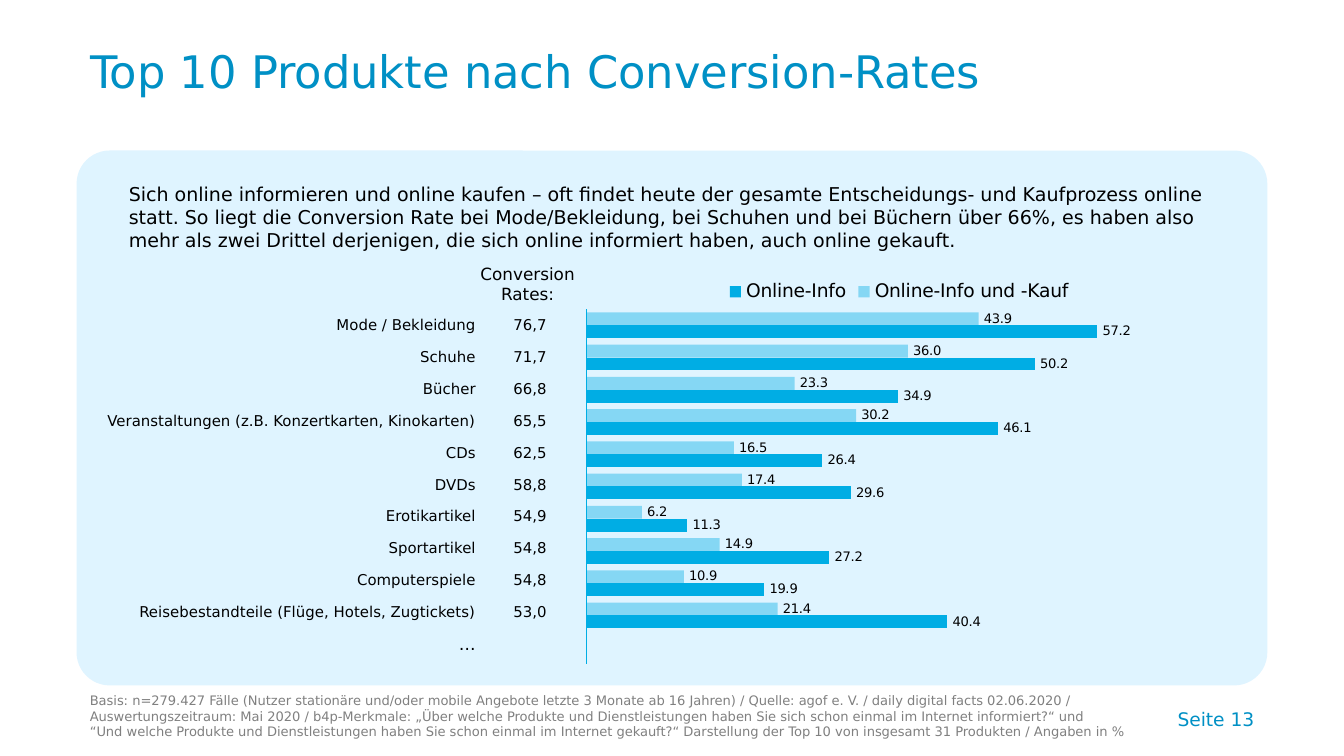
from dataclasses import dataclass

from lxml.etree import SubElement
from pptx import Presentation
from pptx.chart.data import CategoryChartData
from pptx.dml.color import RGBColor
from pptx.enum.chart import XL_CHART_TYPE, XL_LEGEND_POSITION, XL_TICK_LABEL_POSITION, XL_TICK_MARK
from pptx.enum.shapes import MSO_SHAPE
from pptx.enum.text import MSO_ANCHOR, PP_ALIGN
from pptx.oxml import parse_xml
from pptx.oxml.ns import nsdecls, qn
from pptx.util import Pt

SCALE = 9144  # EMU per px, 100 px to the inch


@dataclass(frozen=True)
class Theme:
    font: str = "DejaVu Sans"
    heading: RGBColor = RGBColor(0x00, 0x90, 0xC5)
    bar: RGBColor = RGBColor(0x00, 0xAD, 0xE4)
    panel: RGBColor = RGBColor(0xDF, 0xF4, 0xFF)
    ink: RGBColor = RGBColor(0x00, 0x00, 0x00)
    muted: RGBColor = RGBColor(0x80, 0x80, 0x80)
    title_size: float = 24
    intro_size: float = 10.2
    legend_size: float = 10
    chart_size: float = 9
    table_size: float = 8
    small_size: float = 7


THEME = Theme()
NO_GRID_STYLE = "{2D5ABB26-0587-4C30-8999-92F81FD0307C}"

# Product, conversion rate, online info, online info and purchase
PRODUCTS = [
    ("Mode / Bekleidung", "76,7", 57.2, 43.9),
    ("Schuhe", "71,7", 50.2, 36.0),
    ("Bücher", "66,8", 34.9, 23.3),
    ("Veranstaltungen (z.B. Konzertkarten, Kinokarten)", "65,5", 46.1, 30.2),
    ("CDs", "62,5", 26.4, 16.5),
    ("DVDs", "58,8", 29.6, 17.4),
    ("Erotikartikel", "54,9", 11.3, 6.2),
    ("Sportartikel", "54,8", 27.2, 14.9),
    ("Computerspiele", "54,8", 19.9, 10.9),
    ("Reisebestandteile (Flüge, Hotels, Zugtickets)", "53,0", 40.4, 21.4),
    ("…", "", None, None),
]
INTRO = (
    "Sich online informieren und online kaufen – oft findet heute der gesamte "
    "Entscheidungs- und Kaufprozess online statt. So liegt die Conversion Rate bei "
    "Mode/Bekleidung, bei Schuhen und bei Büchern über 66%, es haben also mehr als "
    "zwei Drittel derjenigen, die sich online informiert haben, auch online gekauft."
)
SOURCE_NOTE = (
    "Basis: n=279.427 Fälle (Nutzer stationäre und/oder mobile Angebote letzte 3 Monate "
    "ab 16 Jahren) / Quelle: agof e. V. / daily digital facts 02.06.2020 / "
    "Auswertungszeitraum: Mai 2020 / b4p-Merkmale: „Über welche Produkte und "
    "Dienstleistungen haben Sie sich schon einmal im Internet informiert?“ und\v"
    "“Und welche Produkte und Dienstleistungen haben Sie schon einmal im Internet "
    "gekauft?“ Darstellung der Top 10 von insgesamt 31 Produkten / Angaben in %"
)


def px(*lengths):
    return [length * SCALE for length in lengths]


def write(frame, text, *, size, color=THEME.ink, align=PP_ALIGN.LEFT,
          anchor=MSO_ANCHOR.TOP, wrap=True, line_spacing=None):
    frame.word_wrap = wrap
    frame.vertical_anchor = anchor
    frame.text = text
    for paragraph in frame.paragraphs:
        paragraph.alignment = align
        paragraph.line_spacing = line_spacing
        for run in paragraph.runs:
            run.font.name = THEME.font
            run.font.size = Pt(size)
            run.font.color.rgb = color


def add_text(slide, box, text, **text_format):
    write(slide.shapes.add_textbox(*px(*box)).text_frame, text, **text_format)


def set_title(slide, box, text):
    title = slide.shapes.title
    title.left, title.top, title.width, title.height = px(*box)
    write(title.text_frame, text, size=THEME.title_size, color=THEME.heading,
          anchor=MSO_ANCHOR.MIDDLE, line_spacing=0.8)


def add_panel(slide, box):
    panel = slide.shapes.add_shape(MSO_SHAPE.ROUNDED_RECTANGLE, *px(*box))
    panel.adjustments[0] = 0.062
    panel.shadow.inherit = False
    panel.fill.solid()
    panel.fill.fore_color.rgb = THEME.panel
    panel.line.fill.background()


def add_rate_table(slide, box, column_widths):
    frame = slide.shapes.add_table(len(PRODUCTS), len(column_widths), *px(*box))
    table = frame.table
    table.first_row = table.horz_banding = False
    table._tbl.tblPr.find(qn("a:tableStyleId")).text = NO_GRID_STYLE
    for column, width in zip(table.columns, px(*column_widths)):
        column.width = width
    for row, (product, rate, *_) in zip(table.rows, PRODUCTS):
        row.height = frame.height // len(PRODUCTS)
        for cell, text, align in zip(row.cells, (product, rate), (PP_ALIGN.RIGHT, PP_ALIGN.CENTER)):
            cell.fill.background()
            cell.margin_left, cell.margin_top, cell.margin_right, cell.margin_bottom = px(1, 1, 1, 0)
            cell.vertical_anchor = MSO_ANCHOR.MIDDLE
            size = THEME.chart_size if text == "…" else THEME.table_size
            write(cell.text_frame, text, size=size, align=align, anchor=MSO_ANCHOR.MIDDLE)
            if not text:  # keeps the empty cell from stretching its row
                mark = SubElement(cell.text_frame.paragraphs[0]._p, qn("a:endParaRPr"))
                mark.set("sz", str(size * 100))


def set_plot_layout(chart, x, y, w, h):
    plot_area = chart._chartSpace.chart.plotArea
    for old in plot_area.findall(qn("c:layout")):
        plot_area.remove(old)
    plot_area.insert(0, parse_xml(
        f'<c:layout {nsdecls("c")}><c:manualLayout><c:layoutTarget val="inner"/>'
        '<c:xMode val="edge"/><c:yMode val="edge"/>'
        f'<c:x val="{x}"/><c:y val="{y}"/><c:w val="{w}"/><c:h val="{h}"/>'
        "</c:manualLayout></c:layout>"))


def style_series(series, opacity):
    series.format.fill.solid()
    series.format.fill.fore_color.rgb = THEME.bar
    if opacity < 100:
        color = series.format.fill._xPr.find(qn("a:solidFill"))[0]
        SubElement(color, qn("a:alpha")).set("val", str(opacity * 1000))
    labels = series.data_labels
    labels.show_value = True
    labels.number_format = "0.0"
    labels.number_format_is_linked = False
    labels.font.size = Pt(THEME.small_size)
    labels.font.name = THEME.font
    labels.font.color.rgb = THEME.ink


def add_bar_chart(slide, box):
    _, _, info, purchase = zip(*PRODUCTS)
    data = CategoryChartData(number_format="0.0")
    data.categories = [str(rank) for rank in range(1, len(PRODUCTS) + 1)]
    data.add_series("Online-Info und -Kauf", purchase)
    data.add_series("Online-Info", info)
    chart = slide.shapes.add_chart(XL_CHART_TYPE.BAR_CLUSTERED, *px(*box), data).chart
    chart.has_title = False
    chart.font.name = THEME.font
    chart.font.size = Pt(THEME.chart_size)
    chart.font.color.rgb = THEME.ink
    set_plot_layout(chart, 0.031, 0.106, 0.938, 0.871)

    # Bars
    plot = chart.plots[0]
    plot.gap_width = 50
    plot.overlap = 0
    plot.vary_by_categories = False
    for series, opacity in zip(plot.series, (40, 100)):
        style_series(series, opacity)

    # Axes
    products = chart.category_axis
    products.reverse_order = True
    products.tick_label_position = XL_TICK_LABEL_POSITION.NONE
    products.major_tick_mark = products.minor_tick_mark = XL_TICK_MARK.NONE
    products.format.line.color.rgb = THEME.bar
    products.format.line.width = Pt(0.75)
    percent = chart.value_axis
    percent.minimum_scale, percent.maximum_scale = 0, 70
    percent.has_major_gridlines = False
    percent.visible = False

    # Legend
    chart.has_legend = True
    chart.legend.position = XL_LEGEND_POSITION.TOP
    chart.legend.include_in_layout = False
    chart.legend.font.size = Pt(THEME.legend_size)


def main():
    deck = Presentation()
    deck.slide_width, = px(1000)
    deck.slide_height = deck.slide_width * 9 // 16
    slide = deck.slides.add_slide(deck.slide_layouts[5])

    # Frame of the page
    add_panel(slide, (57, 112, 886, 398))
    set_title(slide, (57, 28, 733, 56), "Top 10 Produkte nach Conversion-Rates")
    add_text(slide, (654, 510, 289, 38), "Seite 13", size=THEME.legend_size,
             color=THEME.heading, align=PP_ALIGN.RIGHT, anchor=MSO_ANCHOR.BOTTOM)

    # Rates and bars
    add_rate_table(slide, (68, 230, 366, 261), (287, 79))
    add_bar_chart(slide, (421, 198, 496, 303))
    add_text(slide, (347, 191, 91, 40), "Conversion\nRates:", size=THEME.chart_size,
             align=PP_ALIGN.CENTER, wrap=False)

    # Source and introduction
    add_text(slide, (57, 516, 823, 39), SOURCE_NOTE, size=THEME.small_size,
             color=THEME.muted, anchor=MSO_ANCHOR.BOTTOM)
    add_text(slide, (86, 131, 831, 64), INTRO, size=THEME.intro_size)
    deck.save("out.pptx")


if __name__ == "__main__":
    main()
